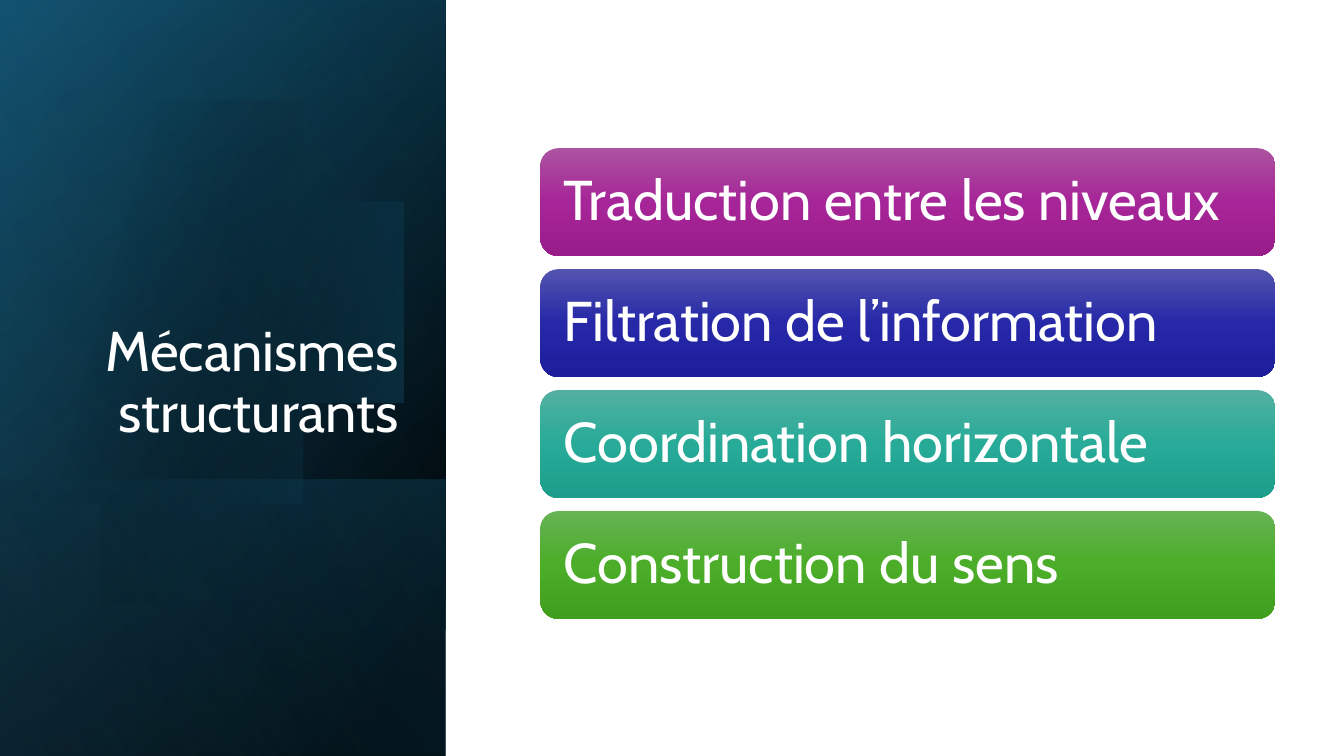
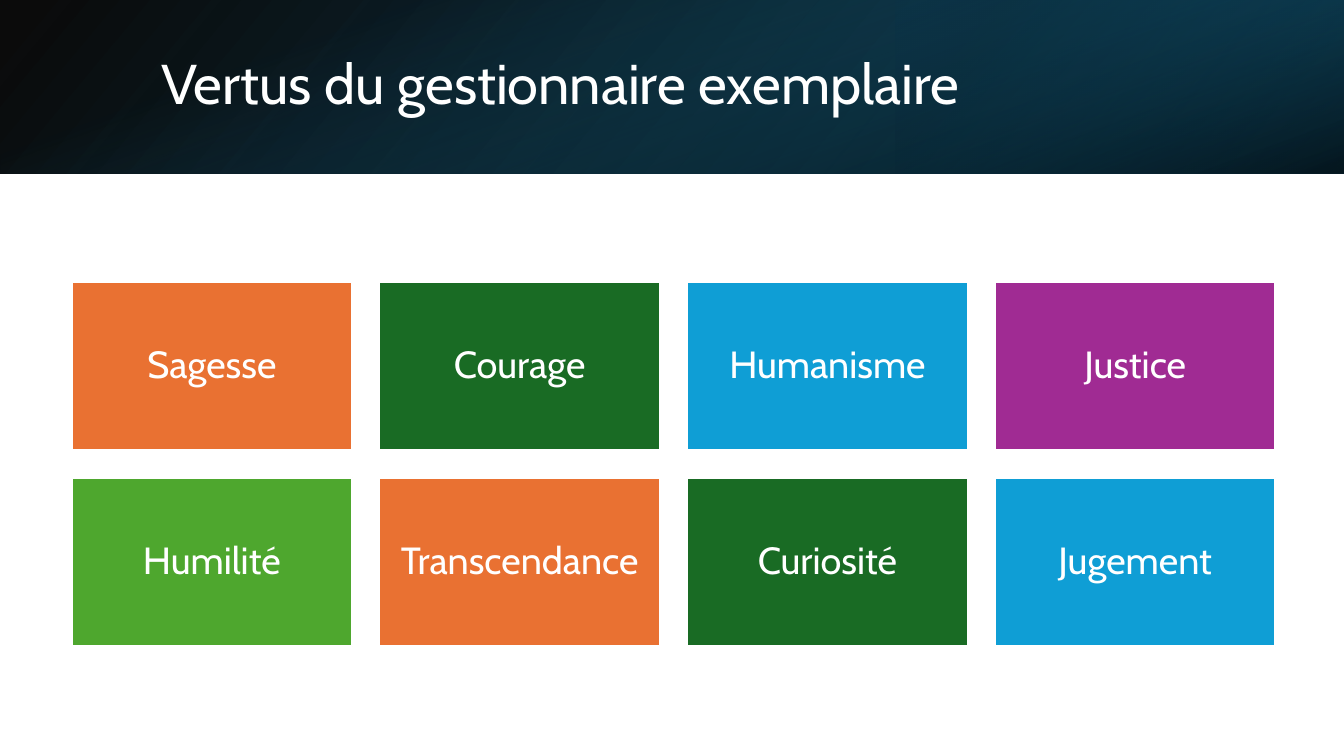
from math import acos, cos, pi, sin

from pptx import Presentation
from pptx.dml.color import RGBColor
from pptx.enum.shapes import MSO_SHAPE as SHAPE
from pptx.enum.text import MSO_ANCHOR as ANCHOR, MSO_AUTO_SIZE as AUTO, PP_ALIGN as ALIGN
from pptx.oxml import parse_xml
from pptx.oxml.ns import nsdecls
from pptx.util import Inches, Pt

FONT, WHITE, BLACK, TEAL = "Cabin", "FFFFFF", "000000", "156082"
ORANGE, GREEN, SKY, PURPLE, LIME = "E97132", "196B24", "0F9ED5", "A02B93", "4EA72E"
W, H = 13.33, 7.5
PANEL, BANNER = 4.42, 1.72  # side panel width, top banner height
RIGHT = 12.65               # right edge of the content


def paint(sp, fill, angle=0, line=None):
    """Fill with one hex colour, or with (position, hex, opacity) stops in percent."""
    sp.shadow.inherit = False
    if line:
        sp.line.color.rgb = RGBColor.from_string(line)
        sp.line.width = Pt(1.5)
    else:
        sp.line.fill.background()
    if isinstance(fill, str):
        sp.fill.solid()
        sp.fill.fore_color.rgb = RGBColor.from_string(fill)
        return
    stops = "".join(
        f'<a:gs pos="{pos * 1000}"><a:srgbClr val="{color}">'
        f'<a:alpha val="{opacity * 1000}"/></a:srgbClr></a:gs>'
        for pos, color, opacity in fill)
    sp.fill.background()
    no_fill = sp.element.spPr.find("{*}noFill")
    sp.element.spPr.replace(no_fill, parse_xml(
        f'<a:gradFill {nsdecls("a")} rotWithShape="1"><a:gsLst>{stops}</a:gsLst>'
        f'<a:lin ang="{angle * 60000}" scaled="0"/></a:gradFill>'))


def write(sp, text, size, align, anchor=ANCHOR.MIDDLE, margin=0.1):
    tf = sp.text_frame
    tf.text = text
    tf.word_wrap, tf.auto_size, tf.vertical_anchor = True, AUTO.NONE, anchor
    tf.margin_left = tf.margin_right = Inches(margin)
    tf.margin_top = tf.margin_bottom = Inches(0.05)
    p = tf.paragraphs[0]
    p.alignment, p.line_spacing = align, 0.9
    p.font.name, p.font.size = FONT, Pt(size)
    p.font.color.rgb = RGBColor.from_string(WHITE)


prs = Presentation()
prs.slide_width, prs.slide_height = Inches(W), Inches(H)

# Title: text, box, alignment, anchor; bands: visible box, rotation, flip, angle, stops
panel, banner = (0, 0, PANEL, H), (0, 0, W, BANNER)
frames = [
    ("Mécanismes structurants", (0.64, 1.84, 3.41, 2.62), ALIGN.RIGHT, ANCHOR.BOTTOM, [
        (panel, 90, True, 50, [(8, BLACK, 100), (100, "104862", 100)]),
        (panel, 90, True, 30, [(0, BLACK, 0), (99, TEAL, 46)]),
        ((0, 4.76, PANEL, H - 4.76), 90, True, 130, [(2, TEAL, 29), (100, BLACK, 30)]),
        (panel, 90, True, 120, [(0, BLACK, 0), (99, "46B1E1", 11)]),
    ]),
    ("Vertus du gestionnaire exemplaire", (1.5, 0.38, 10.98, 0.96), ALIGN.LEFT, ANCHOR.MIDDLE, [
        (banner, 0, True, 140, [(0, BLACK, 96), (100, "104862", 100)]),
        ((W * 2 / 3, 0, W / 3, BANNER), 180, True, 320, [(19, "0B3041", 68), (100, TEAL, 79)]),
        (banner, 90, False, 340, [(23, TEAL, 0), (99, BLACK, 74)]),
    ]),
]

# Bands and titles of both slides
slides = []
for text, box, align, anchor, bands in frames:
    s = prs.slides.add_slide(prs.slide_layouts[5])
    slides.append(s)
    for (x, y, w, h), rotation, flip, angle, stops in bands:
        if rotation == 90:  # a quarter turn swaps the sides about the centre
            x, y, w, h = x + (w - h) / 2, y + (h - w) / 2, h, w
        sp = s.shapes.add_shape(SHAPE.RECTANGLE, *map(Inches, (x, y, w, h)))
        sp.rotation = rotation
        if flip:
            sp.element.spPr.xfrm.set("flipH", "1")
        paint(sp, stops, angle)
    title = s.shapes.title
    title.left, title.top, title.width, title.height = map(Inches, box)
    write(title, text, 40, align, anchor)
mechanisms, virtues = slides

# Slide 1: disc cut off on its left side
cx, cy, radius, cut = 1.44, 3.38, 2.28, -0.15
half, steps = pi - acos((cx - cut) / radius), 90
arc = [-half + 2 * half * i / steps for i in range(steps + 1)]
points = [(cx + radius * cos(a), cy + radius * sin(a)) for a in arc]
outline = mechanisms.shapes.build_freeform(*points[0], scale=Inches(1))
outline.add_line_segments(points[1:], close=True)
paint(outline.convert_to_shape(), [(29, BLACK, 0), (100, TEAL, 43)], 14)

# Slide 1: stacked bars
bars = [
    ("Traduction entre les niveaux", ("AC53A0", "A62598", "991C8B")),
    ("Filtration de l’information", ("5354AE", "2628A8", "1D1E9B")),
    ("Coordination horizontale", ("53B0A1", "27AB98", "1D9D8B")),
    ("Construction du sens", ("66B354", "4BAD28", "409F1E")),
]
left, top, height, pitch = 5.36, 1.47, 1.07, 1.2
for row, (text, shades) in enumerate(bars):
    sp = mechanisms.shapes.add_shape(
        SHAPE.ROUNDED_RECTANGLE, Inches(left), Inches(top + row * pitch),
        Inches(RIGHT - left), Inches(height))
    paint(sp, [(50 * i, shade, 100) for i, shade in enumerate(shades)], 90)
    write(sp, text, 40, ALIGN.LEFT, margin=0.18)

# Slide 2: grid of cards, colours in rotation
cards = ["Sagesse", "Courage", "Humanisme", "Justice",
         "Humilité", "Transcendance", "Curiosité", "Jugement"]
colors = [ORANGE, GREEN, SKY, PURPLE, LIME]
columns, left, top, gap, height = 4, 0.71, 2.8, 0.27, 1.67
width = (RIGHT - left - (columns - 1) * gap) / columns
for i, text in enumerate(cards):
    row, col = divmod(i, columns)
    sp = virtues.shapes.add_shape(
        SHAPE.RECTANGLE, Inches(left + col * (width + gap)),
        Inches(top + row * (height + gap)), Inches(width), Inches(height))
    paint(sp, colors[i % len(colors)], line=WHITE)
    write(sp, text, 27, ALIGN.CENTER, margin=0.11)

# Titles in front of the bands
for s in slides:
    s.shapes.element.append(s.shapes.title.element)

prs.save("out.pptx")
